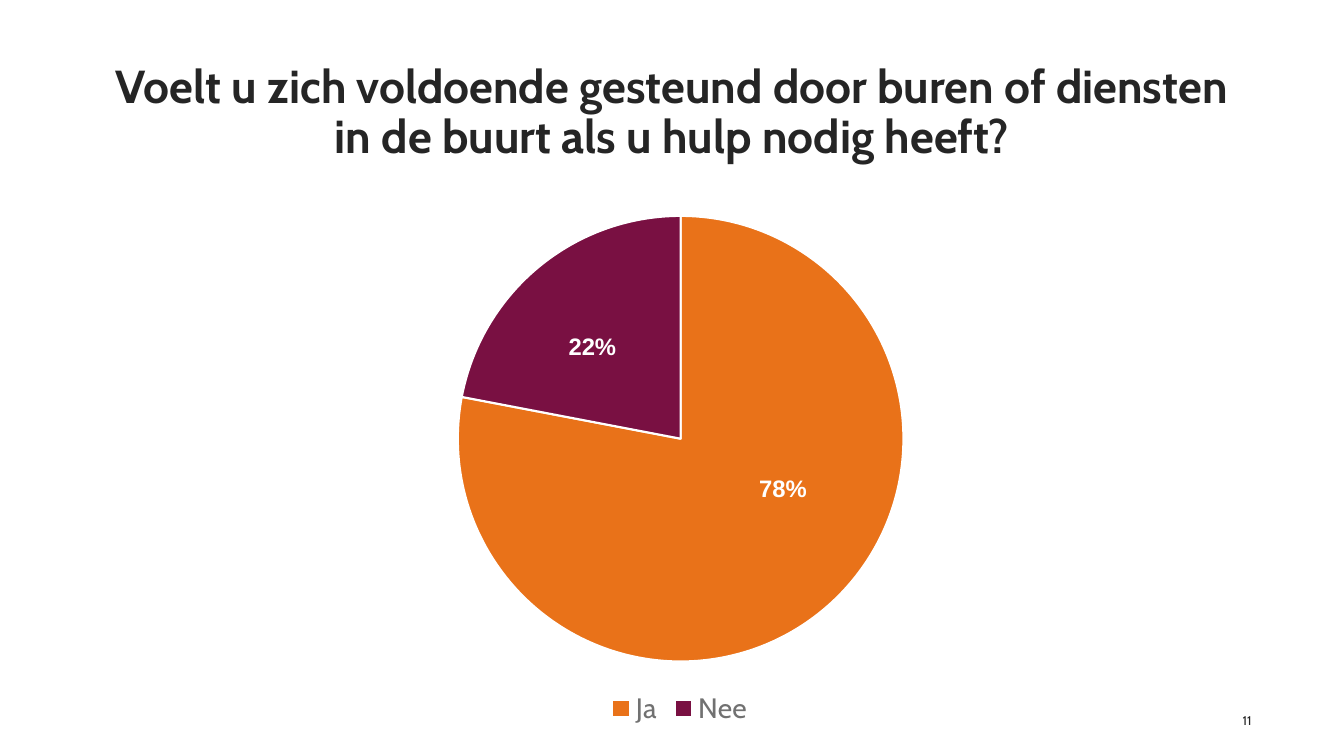
from pptx import Presentation
from pptx.chart.data import CategoryChartData
from pptx.dml.color import RGBColor
from pptx.enum.chart import XL_CHART_TYPE, XL_LEGEND_POSITION
from pptx.enum.text import MSO_ANCHOR, PP_ALIGN
from pptx.oxml import parse_xml
from pptx.oxml.ns import nsdecls
from pptx.util import Pt

INK = RGBColor(0x25, 0x25, 0x25)
GREY = RGBColor(0x71, 0x71, 0x71)
WHITE = RGBColor(0xFF, 0xFF, 0xFF)
ORANGE = RGBColor(0xE9, 0x72, 0x19)
PLUM = RGBColor(0x79, 0x10, 0x42)

ANSWERS = {"Ja": (78, ORANGE), "Nee": (22, PLUM)}
LABEL_OFFSETS = {"Ja": (493.2, 193.7), "Nee": (357.1, 92.2)}
PIE_LAYOUT = {"x": 0.318, "y": 0.027, "w": 0.365, "h": 0.841}


def style_font(font, size, color, name="Cabin", bold=False):
    """Apply typeface, size, colour and weight to a font."""
    font.name = name
    font.size = Pt(size)
    font.color.rgb = color
    font.bold = bold


def add_text(page, box, text, size, color, align=PP_ALIGN.LEFT,
             anchor=MSO_ANCHOR.TOP, spacing=None, name="Cabin", bold=False):
    """Place one paragraph in a box without margins."""
    frame = page.shapes.add_textbox(*map(Pt, box)).text_frame
    frame.word_wrap = True
    frame.vertical_anchor = anchor
    frame.margin_left = frame.margin_right = 0
    frame.margin_top = frame.margin_bottom = 0
    para = frame.paragraphs[0]
    para.text = text
    para.alignment = align
    para.line_spacing = spacing
    style_font(para.font, size, color, name, bold)


def add_title(page, box):
    """Write the survey question centred in the box."""
    question = ("Voelt u zich voldoende gesteund door buren of diensten "
                "in de buurt als u hulp nodig heeft?")
    add_text(page, box, question, 33, INK, PP_ALIGN.CENTER,
             MSO_ANCHOR.MIDDLE, 0.9, bold=True)


def set_pie_layout(chart):
    """Fix the pie's inner plot area as fractions of the chart."""
    modes = '<c:xMode val="edge"/><c:yMode val="edge"/>'
    sizes = "".join(f'<c:{key} val="{part}"/>' for key, part in PIE_LAYOUT.items())
    plot_area = chart.plots[0]._element.getparent()
    for old in plot_area.findall("{*}layout"):
        plot_area.remove(old)
    plot_area.insert(0, parse_xml(
        f'<c:layout {nsdecls("c")}><c:manualLayout>'
        f'<c:layoutTarget val="inner"/>{modes}{sizes}'
        '</c:manualLayout></c:layout>'))


def add_answer_pie(page, box):
    """Draw the pie of answers with its legend and percentages."""
    data = CategoryChartData()
    data.categories = list(ANSWERS)
    data.add_series("Series 1", [value for value, _ in ANSWERS.values()])
    chart = page.shapes.add_chart(XL_CHART_TYPE.PIE, *map(Pt, box), data).chart
    style_font(chart.font, 10, INK)
    chart.has_title = False
    chart.has_legend = True
    chart.legend.position = XL_LEGEND_POSITION.BOTTOM
    chart.legend.include_in_layout = False
    style_font(chart.legend.font, 20, GREY)
    set_pie_layout(chart)

    left, top = box[:2]
    points = chart.plots[0].series[0].points
    for index, (answer, (value, color)) in enumerate(ANSWERS.items()):
        slice_format = points[index].format
        slice_format.fill.solid()
        slice_format.fill.fore_color.rgb = color
        slice_format.line.color.rgb = WHITE
        slice_format.line.width = Pt(1.5)
        across, down = LABEL_OFFSETS[answer]
        add_text(page, (left + across, top + down, 60, 20), f"{value}%", 17,
                 WHITE, spacing=Pt(21), name="Arial", bold=True)


def add_page_number(page, box):
    """Write the page number at the right of the box."""
    add_text(page, box, "11", 9, INK, PP_ALIGN.RIGHT, MSO_ANCHOR.MIDDLE)


def main():
    """Build and save the survey slide."""
    deck = Presentation()
    deck.slide_width, deck.slide_height = Pt(960), Pt(540)
    page = deck.slides.add_slide(deck.slide_layouts[6])
    add_title(page, (66, 57, 828, 48))
    add_answer_pie(page, (49, 144, 873.5, 378.5))
    add_page_number(page, (678, 507.5, 216, 14.5))
    deck.save("out.pptx")


if __name__ == "__main__":
    main()
